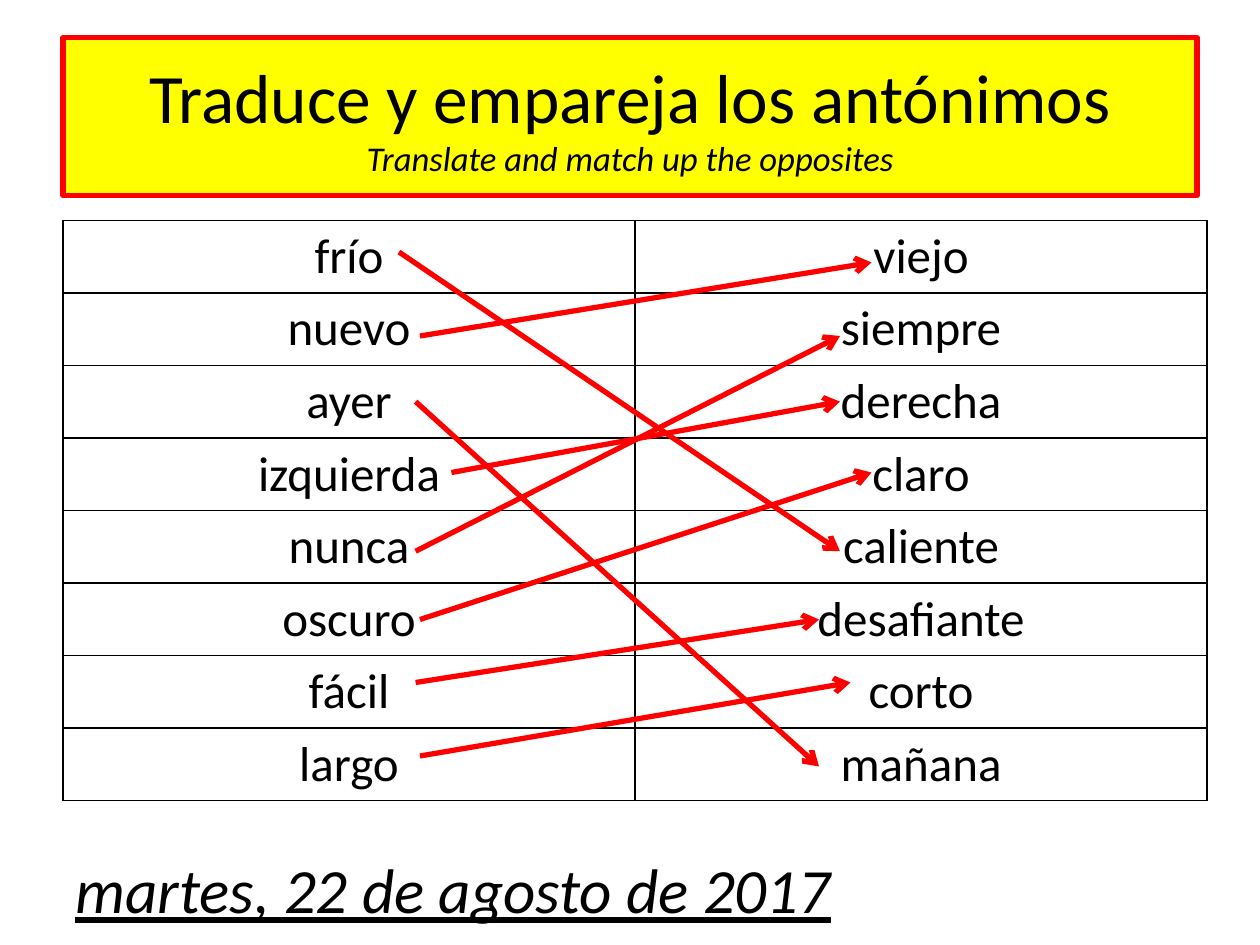
from collections import namedtuple

from lxml import etree
from pptx import Presentation
from pptx.dml.color import RGBColor
from pptx.enum.shapes import MSO_CONNECTOR, MSO_SHAPE
from pptx.enum.text import MSO_ANCHOR, PP_ALIGN
from pptx.oxml.ns import qn
from pptx.util import Pt

STRAIGHT = MSO_CONNECTOR.STRAIGHT
ROUNDED = MSO_SHAPE.ROUNDED_RECTANGLE
MIDDLE = MSO_ANCHOR.MIDDLE
CENTER = PP_ALIGN.CENTER
LEFT = PP_ALIGN.LEFT

Box = namedtuple("Box", "left top width height")
Word = namedtuple("Word", "text x y")

BLACK, RED, YELLOW, WHITE = "000000", "FF0000", "FFFF00", "FFFFFF"

LEFT_WORDS = [
    Word("frío", 192, 18),
    Word("nuevo", 204, 66),
    Word("ayer", 201.5, 103.5),
    Word("izquierda", 222, 144),
    Word("nunca", 201.5, 189),
    Word("oscuro", 204, 228),
    Word("fácil", 201.5, 264),
    Word("largo", 204, 306),
]
RIGHT_WORDS = [
    Word("viejo", 462, 24),
    Word("siempre", 444, 66),
    Word("derecha", 444, 103.5),
    Word("claro", 462, 144),
    Word("caliente", 444, 189),
    Word("desafiante", 432, 228),
    Word("corto", 450, 264),
    Word("mañana", 432, 312),
]
OPPOSITES = {
    "frío": "caliente",
    "nuevo": "viejo",
    "ayer": "mañana",
    "izquierda": "derecha",
    "nunca": "siempre",
    "oscuro": "claro",
    "fácil": "desafiante",
    "largo": "corto",
}


def color(value):
    return RGBColor.from_string(value)


def in_points(box):
    return [Pt(length) for length in box]


def add_span(para, text, size, **formats):
    span = para.add_run()
    span.text = text
    values = {"name": "Calibri", "size": Pt(size), **formats}
    for name, value in values.items():
        setattr(span.font, name, value)
    span.font.color.rgb = color(BLACK)


def set_frame(frame, alignment):
    for name, value in {"word_wrap": True, "vertical_anchor": MIDDLE}.items():
        setattr(frame, name, value)
    para = frame.paragraphs[0]
    para.alignment = alignment
    return para


def add_title(page, box):
    banner = page.shapes.add_shape(ROUNDED, *in_points(box))
    banner.adjustments[0] = 0
    banner.shadow.inherit = False
    banner.fill.solid()
    banner.fill.fore_color.rgb = color(YELLOW)
    banner.line.color.rgb = color(RED)
    banner.line.width = Pt(3)
    para = set_frame(banner.text_frame, CENTER)
    add_span(para, "Traduce y empareja los antónimos", 39.6)
    para.add_line_break()
    add_span(para, "Translate and match up the opposites", 19.8, italic=True)


def add_borders(cell):
    properties = cell._tc.get_or_add_tcPr()
    for position, side in enumerate(("lnL", "lnR", "lnT", "lnB")):
        border = etree.Element(qn(f"a:{side}"), w=str(Pt(1)))
        fill = etree.SubElement(border, qn("a:solidFill"))
        etree.SubElement(fill, qn("a:srgbClr"), val=BLACK)
        properties.insert(position, border)


def add_words(page, box):
    frame = page.shapes.add_table(len(LEFT_WORDS), 2, *in_points(box))
    table = frame.table
    for name in ("first_row", "horz_banding"):
        setattr(table, name, False)
    for row, pair in enumerate(zip(LEFT_WORDS, RIGHT_WORDS)):
        for column, word in enumerate(pair):
            cell = table.cell(row, column)
            cell.fill.solid()
            cell.fill.fore_color.rgb = color(WHITE)
            add_borders(cell)
            para = cell.text_frame.paragraphs[0]
            para.alignment = CENTER
            add_span(para, word.text, 28)


def add_date(page, box):
    label = page.shapes.add_textbox(*in_points(box))
    para = set_frame(label.text_frame, LEFT)
    add_span(para, "martes, 22 de agosto de 2017", 36, italic=True, underline=True)


def add_matches(page, box):
    targets = {word.text: word for word in RIGHT_WORDS}
    for start in LEFT_WORDS:
        end = targets[OPPOSITES[start.text]]
        ends = [
            Pt(length)
            for word in (start, end)
            for length in (box.left + word.x, box.top + word.y)
        ]
        arrow = page.shapes.add_connector(STRAIGHT, *ends)
        arrow.line.color.rgb = color(RED)
        arrow.line.width = Pt(3)
        etree.SubElement(arrow.line._get_or_add_ln(), qn("a:tailEnd"), type="arrow")
        etree.SubElement(arrow._element.spPr, qn("a:effectLst"))


def main():
    deck = Presentation()
    deck.slide_width, deck.slide_height = Pt(720), Pt(540)
    page = deck.slides.add_slide(deck.slide_layouts[6])
    words_box = Box(36, 126, 653.76, 326.4)
    add_title(page, Box(36, 21.6, 648, 90))
    add_words(page, words_box)
    add_date(page, Box(36, 486, 546, 43.2))
    add_matches(page, words_box)
    deck.save("out.pptx")


if __name__ == "__main__":
    main()
